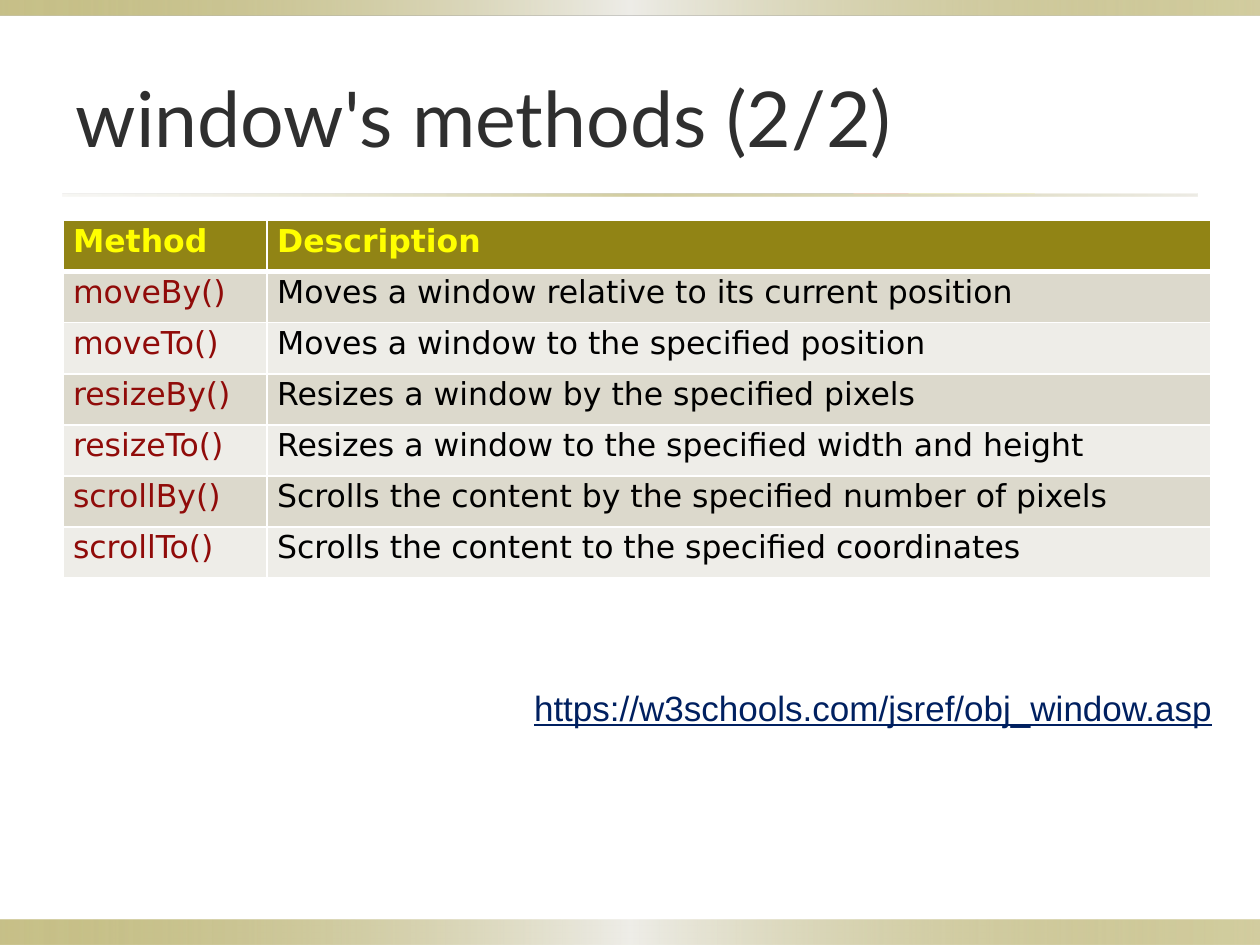
from lxml import etree
from pptx import Presentation
from pptx.dml.color import RGBColor
from pptx.enum.shapes import MSO_SHAPE
from pptx.enum.text import MSO_ANCHOR, MSO_AUTO_SIZE, PP_ALIGN
from pptx.oxml import parse_xml
from pptx.oxml.ns import nsdecls, qn
from pptx.util import Inches, Pt

RECTANGLE = MSO_SHAPE.RECTANGLE
MIDDLE = MSO_ANCHOR.MIDDLE
LEFT = PP_ALIGN.LEFT
FIT_SHAPE = MSO_AUTO_SIZE.SHAPE_TO_FIT_TEXT


def color(value):
    return RGBColor.from_string(value)


def write(frame, text, ink, **formats):
    para = frame.paragraphs[0]
    para.alignment = LEFT
    span = para.add_run()
    span.text = text
    span.font.color.rgb = color(ink)
    for name, value in formats.items():
        setattr(span.font, name, value)


deck = Presentation()
deck.slide_width, deck.slide_height = Inches(10), Inches(7.5)
page = deck.slides.add_slide(deck.slide_layouts[5])

band_stops = [(0, "918415", 50), (50, "EEEDE8", 100), (100, "918415", 40)]
rule_stops = [(0, "DCD9CC", 20), (50, "918415", 40), (100, "DCD9CC", 50)]
bands = [
    (0, 7.3, 10, 0.2, band_stops),
    (0, 0, 10, 0.12, band_stops),
    (0.5, 1.54, 9, 0.02, rule_stops),
]
for left, top, width, height, stops in bands:
    band = page.shapes.add_shape(
        RECTANGLE, Inches(left), Inches(top), Inches(width), Inches(height))
    band.shadow.inherit = False
    band.line.fill.background()
    stop_xml = "".join(
        f'<a:gs pos="{place * 1000}"><a:srgbClr val="{tint}">'
        f'<a:alpha val="{alpha * 1000}"/></a:srgbClr></a:gs>'
        for place, tint, alpha in stops)
    gradient = parse_xml(
        f'<a:gradFill {nsdecls("a")} rotWithShape="1"><a:gsLst>{stop_xml}</a:gsLst>'
        '<a:lin ang="0" scaled="0"/></a:gradFill>')
    band.element.spPr.find(qn("a:prstGeom")).addnext(gradient)

title = page.shapes.title
title.left, title.top, title.width, title.height = (
    Inches(0.5), Inches(0.3), Inches(9), Inches(1.25))
title.text_frame.vertical_anchor = MIDDLE
write(title.text_frame, "window's methods (2/2)", "2F2F2F", size=Pt(44), name="Lato")

methods = [
    ("Method", "Description"),
    ("moveBy()", "Moves a window relative to its current position"),
    ("moveTo()", "Moves a window to the specified position"),
    ("resizeBy()", "Resizes a window by the specified pixels"),
    ("resizeTo()", "Resizes a window to the specified width and height"),
    ("scrollBy()", "Scrolls the content by the specified number of pixels"),
    ("scrollTo()", "Scrolls the content to the specified coordinates"),
]
table = page.shapes.add_table(
    len(methods), 2, Inches(0.5), Inches(1.75), Inches(9.11), Inches(2.84)).table
for column, width in zip(table.columns, (1.62, 7.49)):
    column.width = Inches(width)

margins = {"margin_left": 0.08, "margin_right": 0.02,
           "margin_top": 0.02, "margin_bottom": 0.02}
for row, texts in enumerate(methods):
    header = row == 0
    fill = "918415" if header else ("EEEDE8", "DCD9CC")[row % 2]
    inks = ("FFFF00", "FFFF00") if header else ("900B09", "000000")
    widths = {"lnL": 1, "lnR": 1, "lnT": 3 if row == 1 else 1, "lnB": 3 if header else 1}
    for col, text in enumerate(texts):
        cell = table.cell(row, col)
        for name, value in margins.items():
            setattr(cell, name, Inches(value))
        properties = cell._tc.get_or_add_tcPr()
        for side, points in widths.items():
            border = etree.SubElement(properties, qn(f"a:{side}"), w=str(Pt(points)))
            paint = etree.SubElement(border, qn("a:solidFill"))
            etree.SubElement(paint, qn("a:srgbClr"), val="FFFFFF")
        cell.fill.solid()
        cell.fill.fore_color.rgb = color(fill)
        write(cell.text_frame, text, inks[col],
              size=Pt(18), name="DejaVu Sans", bold=header)

address = page.shapes.add_textbox(Inches(4.14), Inches(5.4), Inches(5.62), Inches(0.44))
address.text_frame.word_wrap = False
address.text_frame.auto_size = FIT_SHAPE
write(address.text_frame, "https://w3schools.com/jsref/obj_window.asp", "002060",
      size=Pt(20), name="Arial", underline=True)

deck.save("out.pptx")
